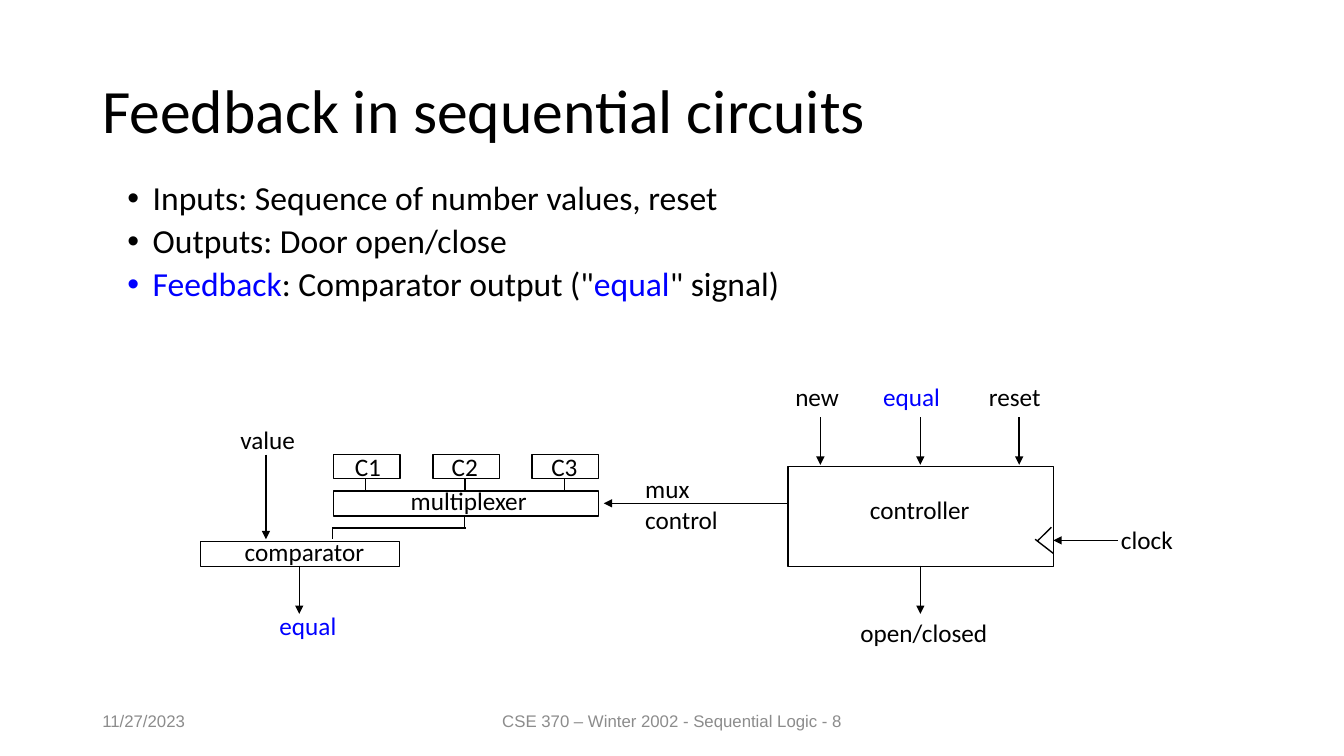
from lxml import etree
from pptx import Presentation
from pptx.dml.color import RGBColor
from pptx.enum import shapes, text
from pptx.oxml import ns
from pptx.util import Pt

COLORS = {"ink": "000000", "feedback": "0000FF", "footer": "8C8C8C"}
LEFT, CENTER = text.PP_ALIGN.LEFT, text.PP_ALIGN.CENTER

prs = Presentation()
prs.slide_width, prs.slide_height = Pt(960), Pt(540)
s = prs.slides.add_slide(prs.slide_layouts[6])


def add_text(words, box, size=18, color="ink", font="Calibri", align=LEFT,
             spacing=None, anchor=text.MSO_ANCHOR.MIDDLE, inset=(7.2, 3.6)):
    tf = s.shapes.add_textbox(*map(Pt, box)).text_frame
    tf.word_wrap, tf.vertical_anchor = True, anchor
    tf.margin_left = tf.margin_right = Pt(inset[0])
    tf.margin_top = tf.margin_bottom = Pt(inset[1])
    tf.text = words
    for p in tf.paragraphs:
        p.alignment, p.line_spacing = align, spacing
        for r in p.runs:
            r.font.size, r.font.name = Pt(size), font
            r.font.color.rgb = RGBColor.from_string(COLORS[color])
    return tf


def add_wire(x1, y1, x2, y2, arrow=False):
    wire = s.shapes.add_connector(shapes.MSO_CONNECTOR.STRAIGHT, Pt(x1), Pt(y1), Pt(x2), Pt(y2))
    wire.line.width = Pt(1)
    wire.line.color.rgb = RGBColor.from_string(COLORS["ink"])
    if arrow:
        etree.SubElement(wire.line._get_or_add_ln(), ns.qn("a:tailEnd"), type="triangle")
    etree.SubElement(wire._element.spPr, ns.qn("a:effectLst"))


# Title, bullets and footer
add_text("Feedback in sequential circuits", (66, 28.8, 828, 104.4), 44, spacing=0.9)

bullets = [
    [("Inputs: Sequence of number values, reset", "ink")],
    [("Outputs: Door open/close", "ink")],
    [("Feedback", "feedback"), (': Comparator output ("', "ink"),
     ("equal", "feedback"), ('" signal)', "ink")],
]
body = add_text("", (48, 126, 859, 133.2), anchor=text.MSO_ANCHOR.TOP)
for i, runs in enumerate(bullets):
    p = body.add_paragraph() if i else body.paragraphs[0]
    p.line_spacing, p.space_before = 0.9, Pt(5)
    pPr = p._p.get_or_add_pPr()
    pPr.set("marL", str(Pt(54)))
    pPr.set("indent", str(Pt(-18)))
    etree.SubElement(pPr, ns.qn("a:buFont"), typeface="Arial")
    etree.SubElement(pPr, ns.qn("a:buChar"), char="•")
    for words, color in runs:
        r = p.add_run()
        r.text = words
        r.font.size, r.font.name = Pt(24), "Calibri"
        r.font.color.rgb = RGBColor.from_string(COLORS[color])

add_text("11/27/2023", (66, 500.4, 216, 28.8), 12, "footer", "Arial")
add_text("CSE 370 – Winter 2002 - Sequential Logic - 8", (318.2, 500.4, 324, 28.8),
         12, "footer", "Arial", CENTER)

# Blocks: controller, comparator, multiplexer and the three constants
constants = [(238.3 + 70.9 * i, 324.7, 47.5, 17.3) for i in range(3)]
blocks = [(563, 333.4, 189.4, 71.2), (143.3, 386.6, 142, 18), (238.3, 350.6, 189.4, 18)]
for box in blocks + constants:
    block = s.shapes.add_shape(shapes.MSO_SHAPE.RECTANGLE, *map(Pt, box))
    block.shadow.inherit = False
    block.fill.background()
    block.line.width = Pt(1)
    block.line.color.rgb = RGBColor.from_string(COLORS["ink"])

# Arrows
for x in (586, 657.4, 728):
    add_wire(x, 298, x, 332, arrow=True)
for x1, y1, x2, y2 in [
    (190, 324.7, 190, 385.2),     # value to comparator
    (213.8, 404, 213.8, 438.5),   # comparator to equal
    (657.4, 404, 657.4, 438.5),   # controller to open/closed
    (563, 359.5, 431.3, 359.5),   # controller to multiplexer
    (798.5, 386, 752.4, 386),     # clock to controller
]:
    add_wire(x1, y1, x2, y2, arrow=True)

# Plain wires
for left, top, width, height in constants:
    x = left + width / 2 - 0.8
    add_wire(x, top + height, x, 350)
for x1, y1, x2, y2 in [
    (332, 368.6, 332, 376.8), (332.6, 377.2, 236.9, 377.2), (237.6, 377.2, 237.6, 385.2),
    (752.4, 395.3, 739.4, 385.2), (740.9, 386.6, 751, 376.6),  # clock notch
]:
    add_wire(x1, y1, x2, y2)

# Labels: words, box, colour, alignment, line spacing
for words, box, color, align, spacing in [
    ("new", (566.6, 270, 88, 31.7), "ink", LEFT, 22.2),
    ("equal", (629.3, 270, 89, 31.7), "feedback", LEFT, 22.2),
    ("reset", (704.9, 270, 89, 31.7), "ink", LEFT, 22.2),
    ("clock", (799.2, 372.2, 88.6, 31.7), "ink", LEFT, 22.2),
    ("mux \vcontrol", (459.4, 335.5, 89, 53.3), "ink", LEFT, 22.2),
    ("open/closed", (579.6, 438.5, 160.6, 31.7), "ink", CENTER, 22.2),
    ("value", (140.4, 300.2, 101.5, 31.7), "ink", CENTER, 22.2),
    ("equal", (169.2, 433.4, 101.5, 31.7), "feedback", CENTER, 22.2),
    ("C1", (241.2, 319.7, 43.2, 31.7), "ink", CENTER, 22.2),
    ("C2", (293.8, 319.7, 76.3, 31.7), "ink", CENTER, 22.2),
    ("C3", (365, 319.7, 76.3, 31.7), "ink", CENTER, 22.2),
    ("comparator", (164.2, 385.2, 106.6, 26.6), "ink", CENTER, 17.2),
    ("multiplexer", (283.7, 349.2, 102.2, 26.6), "ink", CENTER, 17.2),
    ("controller", (612, 355.7, 90, 26.6), "ink", CENTER, 17.2),
]:
    add_text(words, box, color=color, align=align, spacing=Pt(spacing),
             anchor=text.MSO_ANCHOR.TOP, inset=(1.5, 2))

prs.save("out.pptx")
